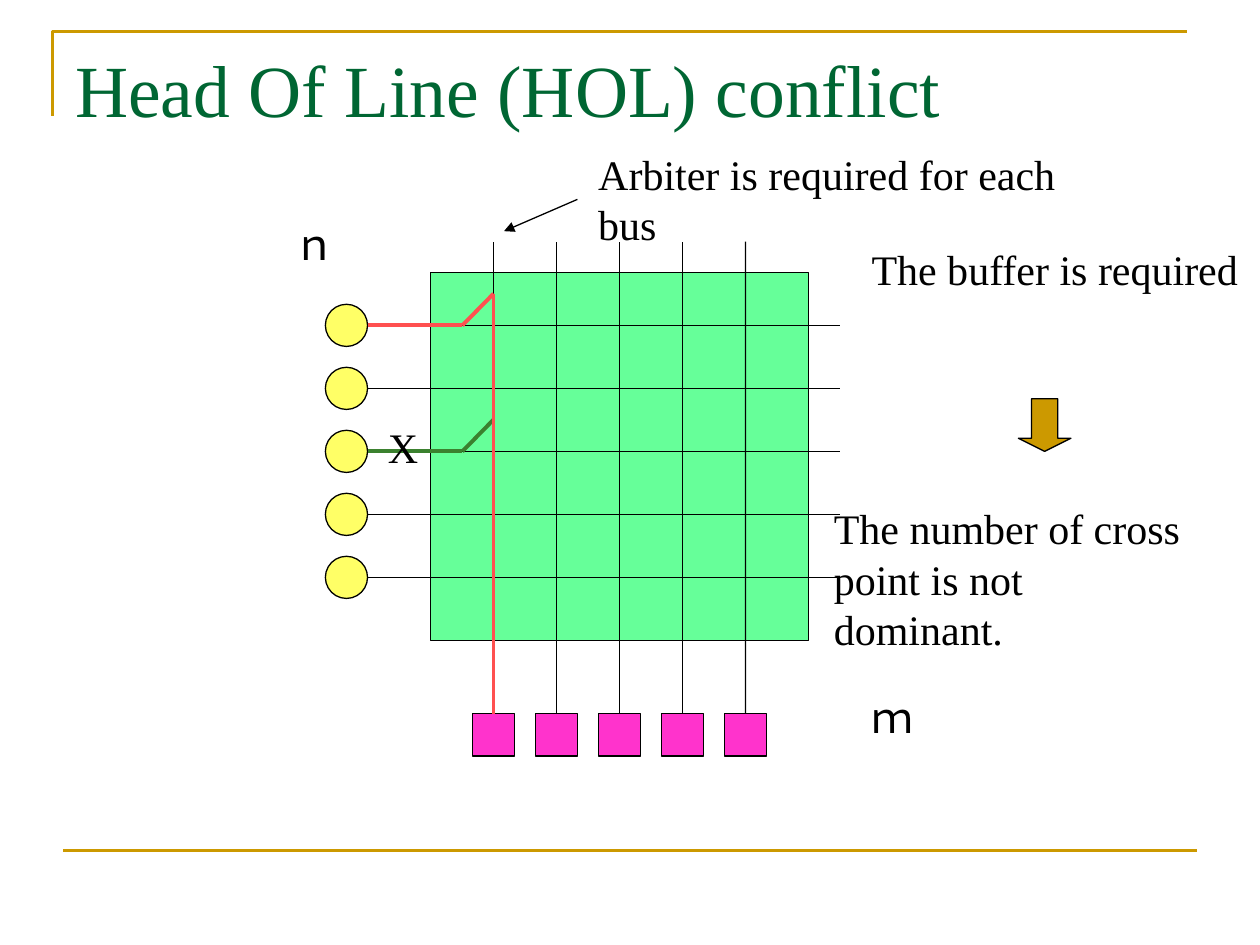
"""Builds a slide on head-of-line conflict in a crossbar switch."""
from dataclasses import dataclass

import pptx
import pptx.dml.color
import pptx.enum.shapes
import pptx.enum.text
import pptx.oxml
import pptx.oxml.ns
import pptx.util

Cm = pptx.util.Cm
Pt = pptx.util.Pt
RGBColor = pptx.dml.color.RGBColor
Shape = pptx.enum.shapes.MSO_SHAPE
STRAIGHT = pptx.enum.shapes.MSO_CONNECTOR.STRAIGHT


@dataclass(frozen=True)
class Theme:
    font: str = "Times New Roman"
    title_size: float = 42
    body_size: float = 24
    title: str = "006633"
    black: str = "000000"
    gold: str = "CC9900"
    switch: str = "66FF99"
    source: str = "FFFF66"
    target: str = "FF33CC"
    granted: str = "FF5050"
    blocked: str = "3B812F"
    thin: float = 0.75
    rule: float = 1.5
    thick: float = 2.25


theme = Theme()


def add_line(x1, y1, x2, y2, color=theme.black, width=theme.thin):
    connector = slide.shapes.add_connector(STRAIGHT, Cm(x1), Cm(y1), Cm(x2), Cm(y2))
    connector.line.color.rgb = RGBColor.from_string(color)
    connector.line.width = Pt(width)
    properties = connector._element.spPr
    properties.append(pptx.oxml.parse_xml(f"<a:effectLst {pptx.oxml.ns.nsdecls('a')}/>"))
    return connector


def add_box(kind, left, top, width, height, fill):
    shape = slide.shapes.add_shape(kind, Cm(left), Cm(top), Cm(width), Cm(height))
    shape.shadow.inherit = False
    shape.fill.solid()
    shape.fill.fore_color.rgb = RGBColor.from_string(fill)
    shape.line.color.rgb = RGBColor.from_string(theme.black)
    shape.line.width = Pt(theme.thin)
    return shape


presentation = pptx.Presentation()
presentation.slide_width = Cm(25.4)
presentation.slide_height = Cm(19.05)
slide = presentation.slides.add_slide(presentation.slide_layouts[6])

builder = slide.shapes.build_freeform(Cm(1.06), Cm(2.33))
builder.add_line_segments([(Cm(1.06), Cm(0.64)), (Cm(23.92), Cm(0.64))], close=False)
corner = builder.convert_to_shape()
corner.shadow.inherit = False
corner.fill.background()
corner.line.color.rgb = RGBColor.from_string(theme.gold)
corner.line.width = Pt(theme.rule)
add_line(1.27, 17.15, 24.13, 17.15, theme.gold, theme.rule)

pitch, port = 1.27, 0.85
rows = [6.56 + pitch * index for index in range(5)]
columns = [9.95 + pitch * index for index in range(5)]
row_start, row_end = 7.41, 16.93
column_top, column_bottom = 4.87, 14.39

add_box(Shape.RECTANGLE, 8.68, 5.5, 7.62, 7.41, theme.switch)
for y in rows:
    add_line(row_start, y, row_end, y)
    add_box(Shape.OVAL, row_start - port, y - port / 2, port, port, theme.source)

targets = []
for x in columns:
    target = add_box(Shape.RECTANGLE, x - port / 2, column_bottom, port, port, theme.target)
    add_line(x, column_bottom, x, column_top).begin_connect(target, 0)
    targets.append(target)

bend, rise = 9.32, 0.64
for y, color in ((rows[0], theme.granted), (rows[2], theme.blocked)):
    add_line(row_start, y, bend, y, color, theme.thick)
    add_line(bend, y, columns[0], y - rise, color, theme.thick)
bus = add_line(columns[0], rows[0] - rise, columns[0], column_bottom, theme.granted, theme.thick)
bus.end_connect(targets[0], 0)

arrow = add_line(11.64, 4.02, 10.16, 4.66)
arrow.line._get_or_add_ln().append(
    pptx.oxml.parse_xml(f'<a:tailEnd {pptx.oxml.ns.nsdecls("a")} type="triangle"/>')
)

down_arrow = add_box(Shape.DOWN_ARROW, 20.53, 8.04, 1.06, 1.06, theme.gold)
down_arrow.adjustments[0] = 0.5
down_arrow.adjustments[1] = 0.25

texts = [
    (1.27, 0.76, 22.86, 3.18, ["Head Of Line (HOL) conflict"], theme.title_size, theme.title),
    (5.66, 4.29, 1.04, 1.27, ["ｎ"], theme.body_size, theme.black),
    (17.32, 13.82, 1.3, 1.27, ["ｍ"], theme.body_size, theme.black),
    (7.57, 8.38, 1.12, 1.27, ["X"], theme.body_size, theme.black),
    (11.81, 2.87, 11.1, 1.27, ["Arbiter is required for each bus"], theme.body_size, theme.black),
    (17.32, 4.78, 7.9, 1.27, ["The buffer is required"], theme.body_size, theme.black),
    (16.56, 10.01, 7.92, 2.29, ["The number of cross", "point is not dominant."],
     theme.body_size, theme.black),
]
for left, top, width, height, lines, size, color in texts:
    text_box = slide.shapes.add_textbox(Cm(left), Cm(top), Cm(width), Cm(height))
    frame = text_box.text_frame
    frame.word_wrap = size == theme.title_size
    frame.vertical_anchor = pptx.enum.text.MSO_ANCHOR.TOP
    for index, line in enumerate(lines):
        paragraph = frame.add_paragraph() if index else frame.paragraphs[0]
        run = paragraph.add_run()
        run.text = line
        run.font.name = theme.font
        run.font.size = Pt(size)
        run.font.color.rgb = RGBColor.from_string(color)

presentation.save("out.pptx")
